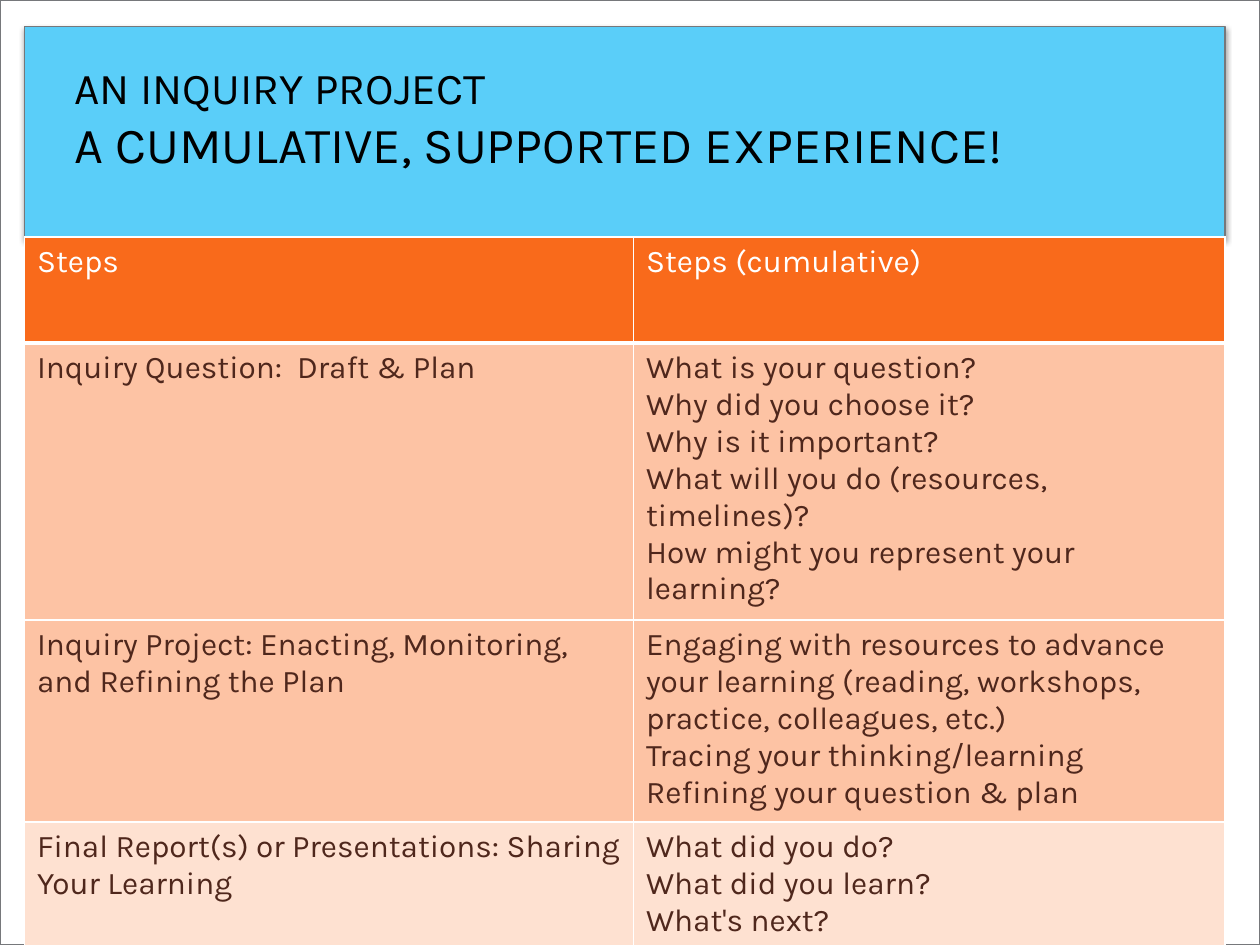
import lxml.etree
import pptx
import pptx.dml.color
import pptx.enum.shapes
import pptx.enum.text
import pptx.oxml
import pptx.oxml.ns
import pptx.util

Pt = pptx.util.Pt
FONT = "Karla"
WHITE, BLACK, GREY = "FFFFFF", "000000", "76787B"
BANNER_BLUE, ORANGE, PEACH, PALE_PEACH = "5ACEF9", "F96A1B", "FDC3A4", "FEE1D1"
BROWN = "4F271C"

COLUMN_WIDTHS = [348, 338]
# height, fill, text colour, then the paragraphs of each cell
STEPS = [
    (60.5, ORANGE, WHITE, ["Steps"], ["Steps (cumulative)"]),
    (75, PEACH, BROWN, ["Inquiry Question:  Draft & Plan"],
     ["What is your question?",
      "Why did you choose it?",
      "Why is it important?",
      "What will you do (resources, timelines)?",
      "How might you represent your learning?"]),
    (74, PEACH, BROWN,
     ["Inquiry Project: Enacting, Monitoring, and Refining the Plan"],
     ["Engaging with resources to advance your learning "
      "(reading, workshops, practice, colleagues, etc.)",
      "Tracing your thinking/learning",
      "Refining your question & plan"]),
    (85.5, PALE_PEACH, BROWN,
     ["Final Report(s) or Presentations: Sharing Your Learning"],
     ["What did you do?", "What did you learn?", "What's next?"]),
]


def rgb(hex_code):
    return pptx.dml.color.RGBColor.from_string(hex_code)


def style_font(font, size, color):
    font.name = FONT
    font.size = Pt(size)
    font.color.rgb = rgb(color)


def add_shadow(shape):
    """Give the shape a soft shadow falling straight down."""
    shape.shadow.inherit = False
    effects = shape._element.spPr.find(pptx.oxml.ns.qn("a:effectLst"))
    effects.append(pptx.oxml.parse_xml(
        f'<a:outerShdw {pptx.oxml.ns.nsdecls("a")} blurRad="{Pt(3.1)}" '
        f'dist="{Pt(1.8)}" dir="5400000" rotWithShape="0">'
        f'<a:srgbClr val="{BLACK}"><a:alpha val="35000"/></a:srgbClr>'
        '</a:outerShdw>'))


def add_panel(slide, left, top, width, height, fill):
    panel = slide.shapes.add_shape(
        pptx.enum.shapes.MSO_SHAPE.RECTANGLE,
        Pt(left), Pt(top), Pt(width), Pt(height))
    panel.fill.solid()
    panel.fill.fore_color.rgb = rgb(fill)
    panel.line.color.rgb = rgb(GREY)
    panel.line.width = Pt(0.75)
    add_shadow(panel)


def add_title(slide, lines):
    """Add the heading as one paragraph of (text, size) lines."""
    box = slide.shapes.add_textbox(Pt(35.5), Pt(30), Pt(555), Pt(106))
    frame = box.text_frame
    frame.word_wrap = True
    frame.margin_top = Pt(4.5)
    frame.vertical_anchor = pptx.enum.text.MSO_ANCHOR.TOP
    heading = frame.paragraphs[0]
    for index, (text, size) in enumerate(lines):
        if index:
            heading.add_line_break()
        run = heading.add_run()
        run.text = text
        style_font(run.font, size, BLACK)


def set_borders(cell, bottom_width):
    properties = cell._tc.get_or_add_tcPr()
    for side, width in (("L", 1), ("R", 1), ("T", 1), ("B", bottom_width)):
        border = lxml.etree.SubElement(
            properties, pptx.oxml.ns.qn(f"a:ln{side}"), w=str(Pt(width)))
        fill = lxml.etree.SubElement(border, pptx.oxml.ns.qn("a:solidFill"))
        lxml.etree.SubElement(fill, pptx.oxml.ns.qn("a:srgbClr"), val=WHITE)


def fill_cell(cell, paragraphs, fill, color, bottom_width):
    set_borders(cell, bottom_width)
    cell.fill.solid()
    cell.fill.fore_color.rgb = rgb(fill)
    cell.text = "\n".join(paragraphs)
    for paragraph in cell.text_frame.paragraphs:
        style_font(paragraph.font, 18, color)


def add_steps_table(slide, left, top):
    table = slide.shapes.add_table(
        len(STEPS), len(COLUMN_WIDTHS), Pt(left), Pt(top),
        Pt(sum(COLUMN_WIDTHS)), Pt(sum(step[0] for step in STEPS))).table
    for column, width in zip(table.columns, COLUMN_WIDTHS):
        column.width = Pt(width)
    for index, (height, fill, color, *contents) in enumerate(STEPS):
        row = table.rows[index]
        row.height = Pt(height)
        for cell, paragraphs in zip(row.cells, contents):
            fill_cell(cell, paragraphs, fill, color, 1 if index else 3)


def main():
    presentation = pptx.Presentation()
    presentation.slide_width = Pt(720)
    presentation.slide_height = Pt(540)
    slide = presentation.slides.add_slide(presentation.slide_layouts[6])
    add_panel(slide, 0, 0, 720, 540, WHITE)
    add_panel(slide, 14, 15, 686, 120.5, BANNER_BLUE)
    add_title(slide, [("AN INQUIRY PROJECT", 25.2),
                      ("A CUMULATIVE, SUPPORTED EXPERIENCE!", 28.8)])
    add_steps_table(slide, 14, 135.5)
    presentation.save("out.pptx")


if __name__ == "__main__":
    main()
